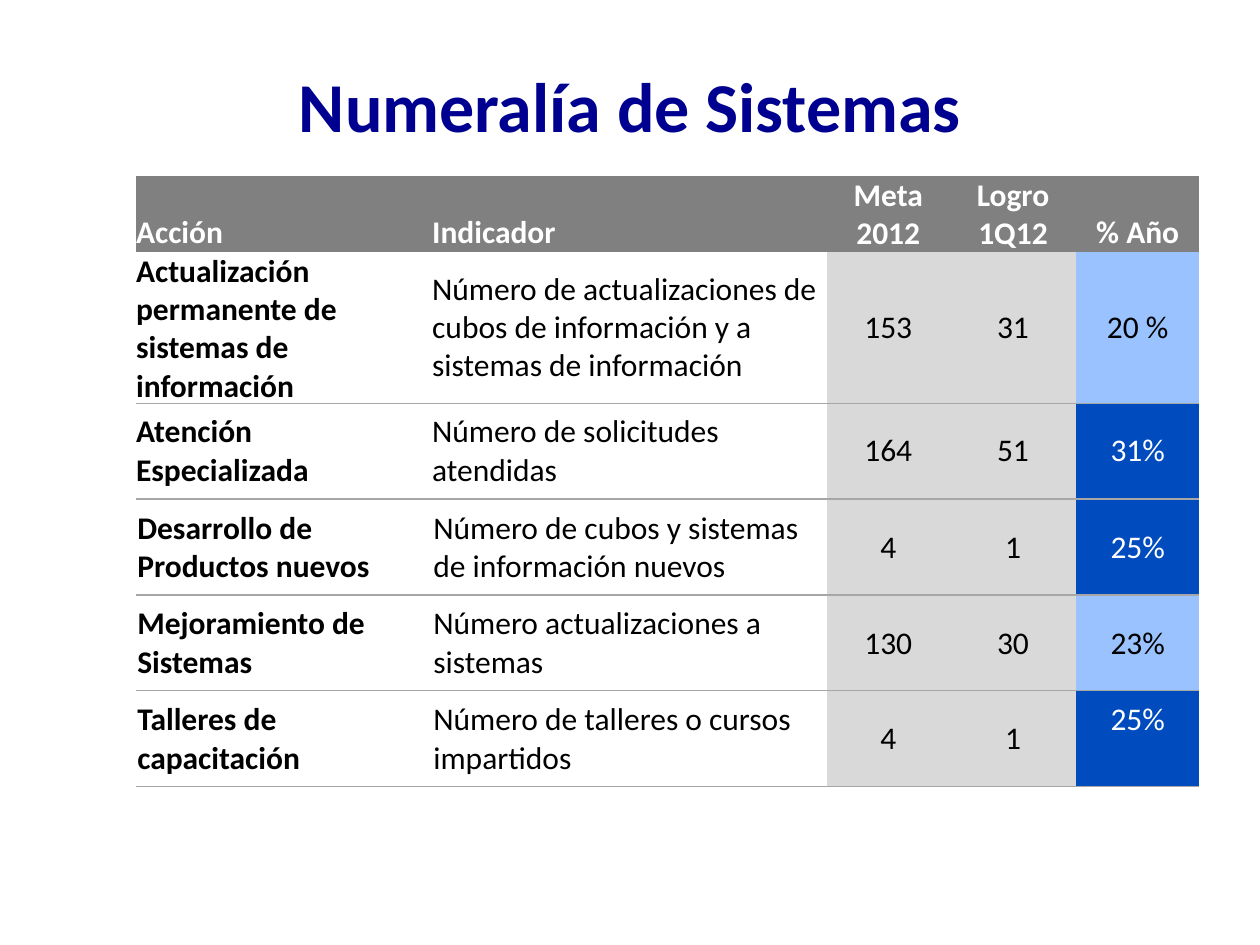
from typing import NamedTuple

from pptx import Presentation
from pptx.dml.color import RGBColor
from pptx.enum.text import MSO_ANCHOR, PP_ALIGN
from pptx.oxml.ns import qn
from pptx.util import Pt
from lxml import etree

LEFT, CENTER, JUSTIFY = PP_ALIGN.LEFT, PP_ALIGN.CENTER, PP_ALIGN.JUSTIFY
MIDDLE, BOTTOM = MSO_ANCHOR.MIDDLE, MSO_ANCHOR.BOTTOM

WHITE, BLACK, NAVY = "FFFFFF", "000000", "000090"
GRAY, PALE_GRAY, RULE = "808080", "D9D9D9", "A6A6A6"
BLUE, PALE_BLUE = "004CBF", "99C2FF"
FONT = "Calibri"

COLUMN_WIDTHS = (169.2, 225.36, 70.56, 72, 70.56)
HEADINGS = ("Acción", "Indicador", "Meta 2012", "Logro 1Q12", "% Año")


class Indicator(NamedTuple):
    texts: tuple[str, ...]
    height: float
    on_track: bool
    inset: float = 0.72
    percent_lift: float = 0


class CellStyle(NamedTuple):
    align: PP_ALIGN
    color: str = BLACK
    fill: str | None = None
    bold: bool = False
    anchor: MSO_ANCHOR = MIDDLE
    rule_above: str | None = RULE
    rule_below: str | None = RULE


INDICATORS = (
    Indicator(("Actualización permanente de sistemas de información",
               "Número de actualizaciones de cubos de información y a sistemas de información",
               "153", "31", "20 %"), 49.68, False, 0),
    Indicator(("Atención\nEspecializada", "Número de solicitudes atendidas",
               "164", "51", "31%"), 54.72, True, 0),
    Indicator(("Desarrollo de Productos nuevos",
               "Número de cubos y sistemas de información nuevos",
               "4", "1", "25%"), 54.72, True),
    Indicator(("Mejoramiento de Sistemas", "Número actualizaciones a sistemas",
               "130", "30", "23%"), 54.72, False),
    Indicator(("Talleres de capacitación", "Número de talleres o cursos impartidos",
               "4", "1", "25%"), 54.72, True, percent_lift=22),
)


def rgb(value: str) -> RGBColor:
    return RGBColor.from_string(value)


def format_text(frame, text: str, align: PP_ALIGN, color: str, size: float, bold: bool) -> None:
    frame.text = text
    for para in frame.paragraphs:
        para.alignment = align
        for span in para.runs:
            font_values = {"name": FONT, "size": Pt(size), "bold": bold}
            for name, value in font_values.items():
                setattr(span.font, name, value)
            span.font.color.rgb = rgb(color)


def add_border(cell, side: str, color: str | None) -> None:
    """Add one cell edge; calls must run left, right, top, bottom."""
    line = etree.SubElement(cell._tc.get_or_add_tcPr(), qn(f"a:ln{side}"), w=str(Pt(1)))
    if color is None:
        etree.SubElement(line, qn("a:noFill"))
    else:
        solid = etree.SubElement(line, qn("a:solidFill"))
        etree.SubElement(solid, qn("a:srgbClr"), val=color)


def fill_cell(cell, text: str, style: CellStyle, inset: float = 0, lift: float = 0) -> None:
    cell_values = {
        "vertical_anchor": style.anchor,
        "margin_left": Pt(inset),
        "margin_right": Pt(inset),
        "margin_top": Pt(inset),
        "margin_bottom": Pt(lift),
    }
    for name, value in cell_values.items():
        setattr(cell, name, value)
    borders = {"L": None, "R": None, "T": style.rule_above, "B": style.rule_below}
    for side, color in borders.items():
        add_border(cell, side, color)
    if style.fill is None:
        cell.fill.background()
    else:
        cell.fill.solid()
        cell.fill.fore_color.rgb = rgb(style.fill)
    format_text(cell.text_frame, text, style.align, style.color, 18, style.bold)


def add_title(page) -> None:
    box = page.shapes.add_textbox(Pt(0), Pt(41.76), Pt(720), Pt(84.24))
    frame = box.text_frame
    frame_values = {"word_wrap": True, "vertical_anchor": MIDDLE, "margin_bottom": Pt(39.6)}
    for name, value in frame_values.items():
        setattr(frame, name, value)
    format_text(frame, "Numeralía de Sistemas", CENTER, NAVY, 40, True)
    frame.paragraphs[0].line_spacing = Pt(36)


def add_indicator_table(page) -> None:
    holder = page.shapes.add_table(len(INDICATORS) + 1, len(HEADINGS),
                                   Pt(77.76), Pt(100.8), Pt(607.68), Pt(348.48))
    table = holder.table
    table.first_row = table.horz_banding = False
    for column, width in zip(table.columns, COLUMN_WIDTHS):
        column.width = Pt(width)

    table.rows[0].height = Pt(33.12)
    for column, heading in enumerate(HEADINGS):
        align = JUSTIFY if column < 2 else CENTER
        style = CellStyle(align, WHITE, GRAY, True, BOTTOM, None, None)
        fill_cell(table.cell(0, column), heading, style)

    number = CellStyle(CENTER, fill=PALE_GRAY)
    for row, indicator in enumerate(INDICATORS, start=1):
        table.rows[row].height = Pt(indicator.height)
        percent = (CellStyle(CENTER, WHITE, BLUE) if indicator.on_track
                   else CellStyle(CENTER, BLACK, PALE_BLUE))
        styles = (CellStyle(LEFT, bold=True), CellStyle(LEFT), number, number, percent)
        for column, (text, style) in enumerate(zip(indicator.texts, styles)):
            if row == 1:
                style = style._replace(rule_above=None)
            lift = indicator.percent_lift if style is percent else 0
            fill_cell(table.cell(row, column), text, style, indicator.inset, lift)
    holder.height = Pt(348.48)


def main() -> None:
    deck = Presentation()
    deck.slide_width, deck.slide_height = Pt(720), Pt(540)
    page = deck.slides.add_slide(deck.slide_layouts[6])
    add_title(page)
    add_indicator_table(page)
    deck.save("out.pptx")


if __name__ == "__main__":
    main()
